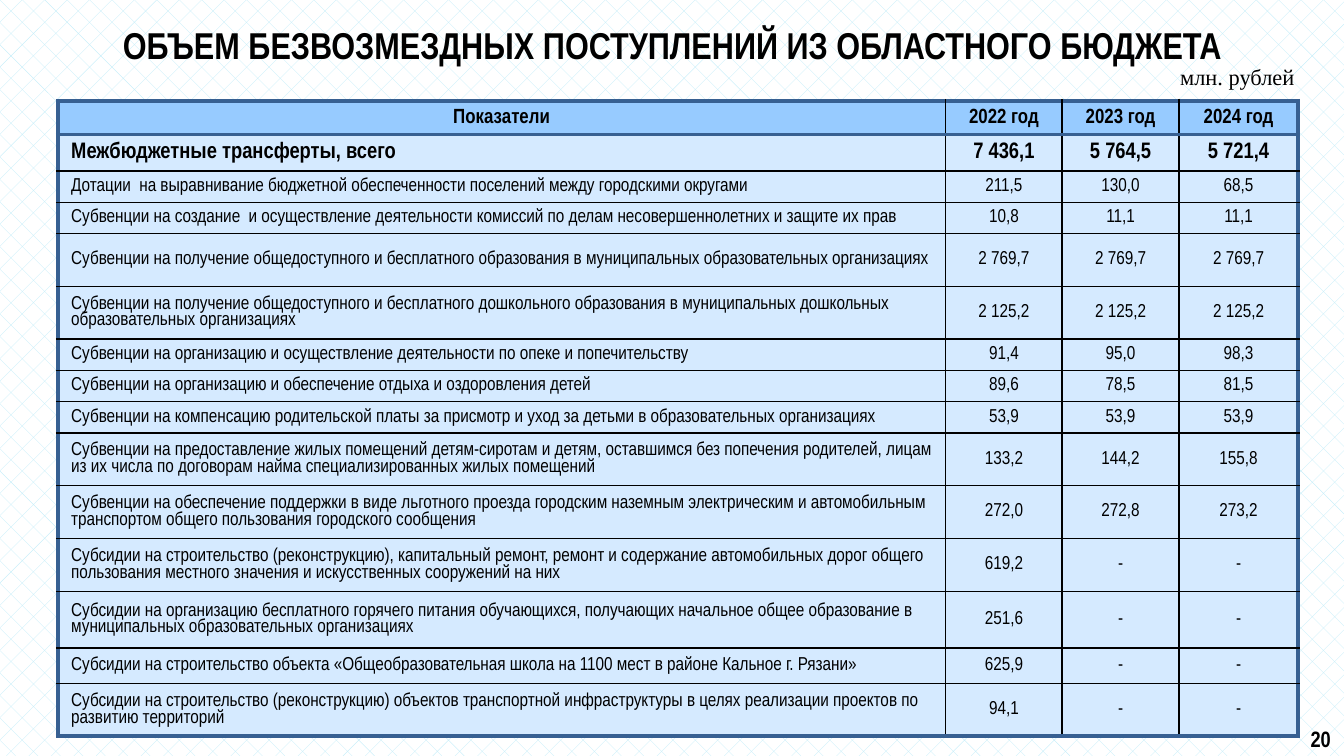
import pptx
import pptx.dml.color
import pptx.enum.dml
import pptx.enum.text
import pptx.oxml
import pptx.oxml.ns
import pptx.util

RGB = pptx.dml.color.RGBColor
BLACK = RGB(0x00, 0x00, 0x00)
WHITE = RGB(0xFF, 0xFF, 0xFF)
MIST = RGB(0xBD, 0xEC, 0xF9)
NAVY = RGB(0x37, 0x60, 0x92)
HEAD = RGB(0x97, 0xCB, 0xFF)
BODY = RGB(0xD5, 0xEA, 0xFF)
NARROW = "Arial Narrow"
SERIF = "Times New Roman"
ALIGN = pptx.enum.text.PP_ALIGN
ANCHOR = pptx.enum.text.MSO_ANCHOR
COLS = (6.62, 0.87, 0.87, 0.89)
ROWS = (
    (0.25, "Показатели", "2022 год", "2023 год", "2024 год"),
    (0.27, "Межбюджетные трансферты, всего", "7 436,1", "5 764,5", "5 721,4"),
    (0.23, "Дотации  на выравнивание бюджетной обеспеченности поселений между городскими округами",
     "211,5", "130,0", "68,5"),
    (0.23, "Субвенции на создание  и осуществление деятельности комиссий по делам "
     "несовершеннолетних и защите их прав", "10,8", "11,1", "11,1"),
    (0.39, "Субвенции на получение общедоступного и бесплатного образования в муниципальных "
     "образовательных организациях", "2 769,7", "2 769,7", "2 769,7"),
    (0.39, "Субвенции на получение общедоступного и бесплатного дошкольного образования в "
     "муниципальных дошкольных образовательных организациях", "2 125,2", "2 125,2", "2 125,2"),
    (0.23, "Субвенции на организацию и осуществление деятельности по опеке и попечительству",
     "91,4", "95,0", "98,3"),
    (0.23, "Субвенции на организацию и обеспечение отдыха и оздоровления детей",
     "89,6", "78,5", "81,5"),
    (0.23, "Субвенции на компенсацию родительской платы за присмотр и уход за детьми в "
     "образовательных организациях", "53,9", "53,9", "53,9"),
    (0.39, "Субвенции на предоставление жилых помещений детям-сиротам и детям, оставшимся без "
     "попечения родителей, лицам из их числа по договорам найма специализированных жилых помещений",
     "133,2", "144,2", "155,8"),
    (0.39, "Субвенции на обеспечение поддержки в виде льготного проезда городским наземным "
     "электрическим и автомобильным транспортом общего пользования городского сообщения",
     "272,0", "272,8", "273,2"),
    (0.39, "Субсидии на строительство (реконструкцию), капитальный ремонт, ремонт и содержание "
     "автомобильных дорог общего пользования местного значения и искусственных сооружений на них",
     "619,2", "-", "-"),
    (0.42, "Субсидии на организацию бесплатного горячего питания обучающихся, получающих начальное "
     "общее образование в муниципальных образовательных организациях", "251,6", "-", "-"),
    (0.26, "Субсидии на строительство объекта «Общеобразовательная школа на 1100 мест в районе "
     "Кальное г. Рязани»", "625,9", "-", "-"),
    (0.39, "Субсидии на строительство (реконструкцию) объектов транспортной инфраструктуры в целях "
     "реализации проектов по развитию территорий", "94,1", "-", "-"),
)


def style(frame, size, font, bold, align):
    para = frame.paragraphs[0]
    para.alignment = align
    for run in para.runs:
        run.font.size = pptx.util.Pt(size)
        run.font.name = font
        run.font.bold = bold
        run.font.color.rgb = BLACK
    return para


def label(slide, box, text, size, font, bold, align, anchor):
    shape = slide.shapes.add_textbox(*map(pptx.util.Inches, box))
    frame = shape.text_frame
    frame.word_wrap = True
    frame.vertical_anchor = anchor
    frame.text = text
    style(frame, size, font, bold, align)


def border(cell, thick):
    props = cell._tc.get_or_add_tcPr()
    for place, side in enumerate("LRTB"):
        color, width = (NAVY, 2.25) if side in thick else (BLACK, 1)
        line = pptx.oxml.parse_xml(
            f'<a:ln{side} {pptx.oxml.ns.nsdecls("a")} w="{pptx.util.Pt(width)}">'
            f'<a:solidFill><a:srgbClr val="{color}"/></a:solidFill></a:ln{side}>')
        props.insert(place, line)


def share(total, parts):
    return [int(total * part / sum(parts)) for part in parts]


def grid(slide, box):
    left, top, width, height = map(pptx.util.Inches, box)
    table = slide.shapes.add_table(len(ROWS), len(COLS), left, top, width, height).table
    for col, span in zip(table.columns, share(width, COLS)):
        col.width = span
    for row, tall in zip(table.rows, share(height, [row[0] for row in ROWS])):
        row.height = tall
    last = len(ROWS) - 1
    for r, (_, *texts) in enumerate(ROWS):
        size = {0: 11, 1: 12}.get(r, 10)
        for c, text in enumerate(texts):
            cell = table.cell(r, c)
            cell.fill.solid()
            cell.fill.fore_color.rgb = BODY if r else HEAD
            cell.vertical_anchor = ANCHOR.MIDDLE
            cell.margin_left = cell.margin_right = pptx.util.Inches(0.1)
            cell.margin_top = cell.margin_bottom = pptx.util.Inches(0.04)
            cell.text_frame.text = text
            align = ALIGN.LEFT if r and not c else ALIGN.CENTER
            para = style(cell.text_frame, size, NARROW, r < 2, align)
            para.line_spacing = 0.95
            edges = {"L": c == 0, "R": c == len(COLS) - 1,
                     "T": r < 2, "B": r in (0, last)}
            border(cell, [side for side, on in edges.items() if on])


def backdrop(slide):
    fill = slide.background.fill
    fill.patterned()
    fill.pattern = pptx.enum.dml.MSO_PATTERN.DIAGONAL_BRICK
    fill.fore_color.rgb = MIST
    fill.back_color.rgb = WHITE


def main():
    deck = pptx.Presentation()
    deck.slide_width = pptx.util.Inches(10)
    deck.slide_height = deck.slide_width * 9 // 16
    slide = deck.slides.add_slide(deck.slide_layouts[6])
    backdrop(slide)
    grid(slide, (0.43, 0.75, 9.23, 4.73))
    label(slide, (0.51, 0.1, 8.99, 0.47),
          "ОБЪЕМ БЕЗВОЗМЕЗДНЫХ ПОСТУПЛЕНИЙ ИЗ ОБЛАСТНОГО БЮДЖЕТА",
          20, NARROW, True, ALIGN.CENTER, ANCHOR.MIDDLE)
    label(slide, (8.47, 0.45, 1.26, 0.24), "млн. рублей",
          12, SERIF, False, ALIGN.RIGHT, ANCHOR.MIDDLE)
    label(slide, (9.33, 5.35, 0.67, 0.26), "20",
          11.9, NARROW, True, ALIGN.RIGHT, ANCHOR.TOP)
    deck.save("out.pptx")


if __name__ == "__main__":
    main()
